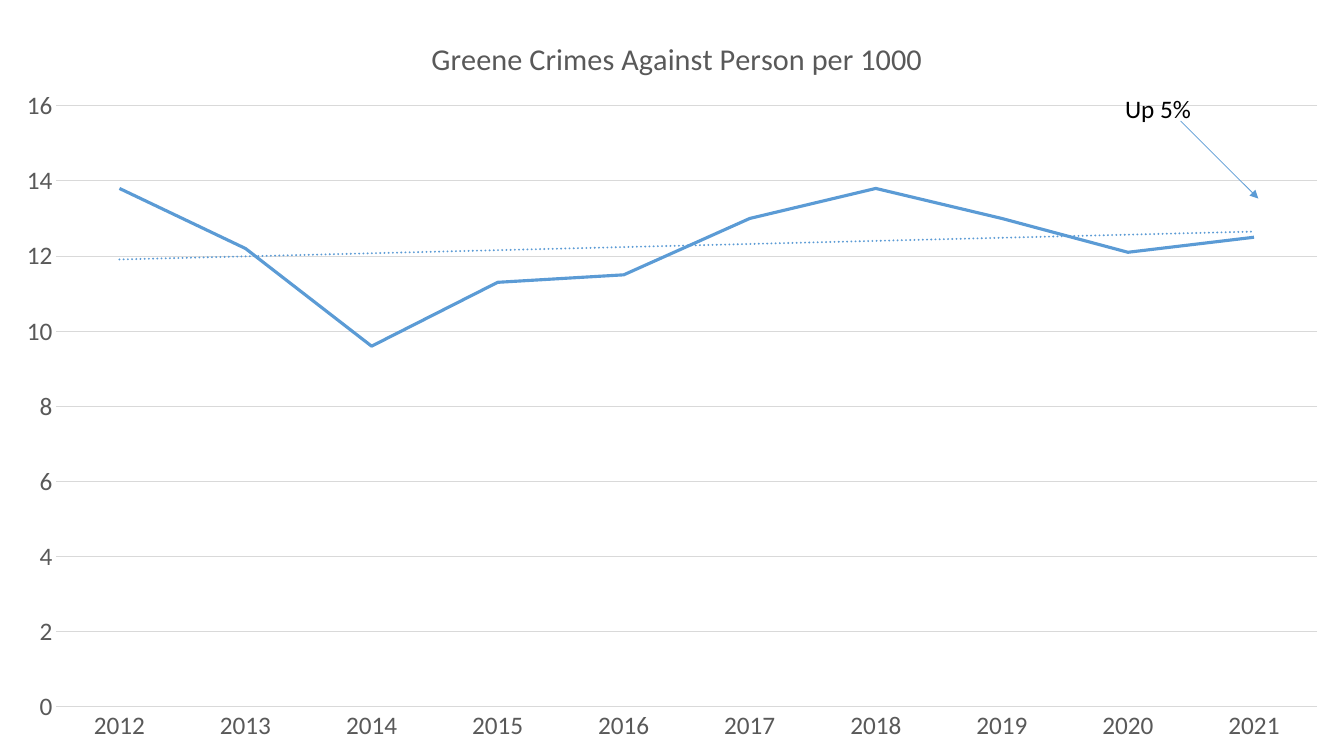
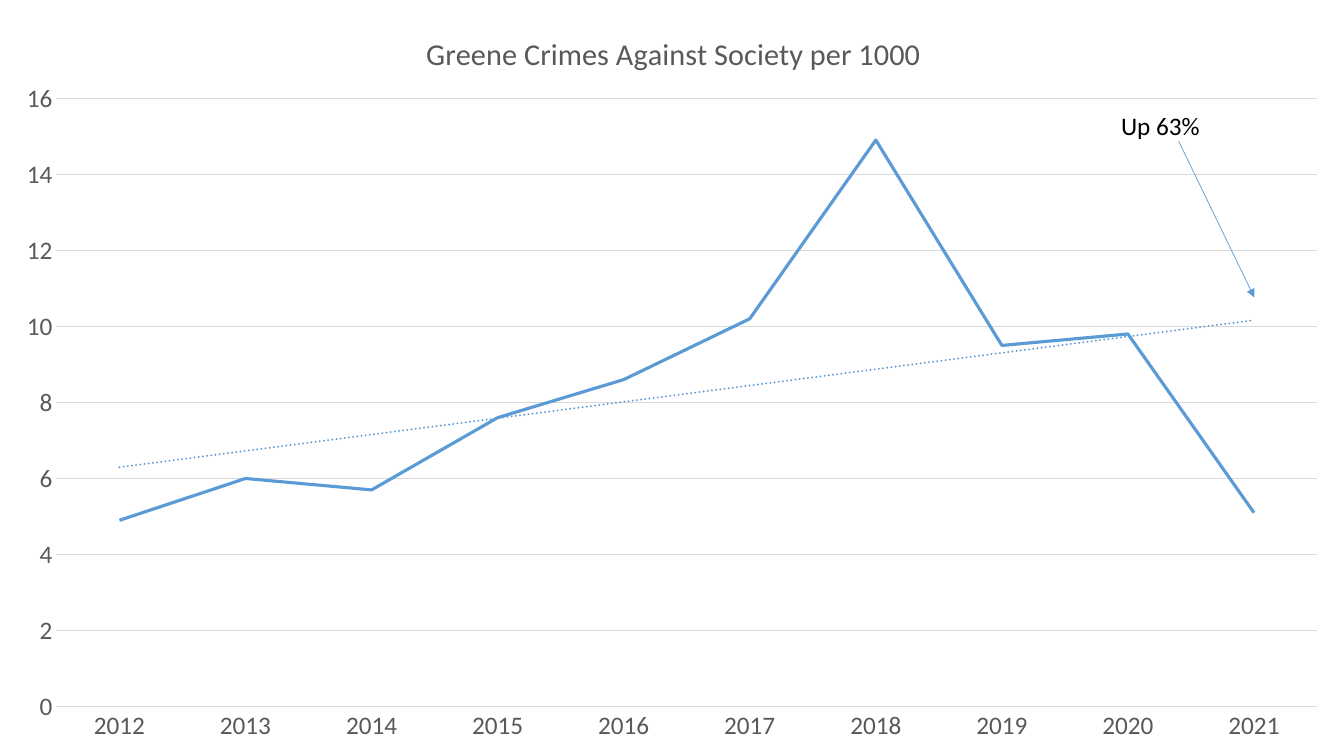
import pptx
import pptx.chart.data
import pptx.dml.color
import pptx.enum.chart
import pptx.enum.dml
import pptx.enum.shapes
import pptx.enum.text
import pptx.oxml
import pptx.oxml.ns
import pptx.util

Inches, Pt = pptx.util.Inches, pptx.util.Pt
FONT = "Calibri"
BLUE, GREY, RULE, BLACK = "5B9BD5", "595959", "D9D9D9", "000000"
WIDE, HIGH = Inches(13.33), Inches(7.5)
YEARS = [str(year) for year in range(2012, 2022)]
NS = pptx.oxml.ns.nsdecls("c", "a")

PAGES = [
    {
        "title": "Greene Crimes Against Person per 1000",
        "rates": [13.8, 12.2, 9.6, 11.3, 11.5, 13, 13.8, 13, 12.1, 12.5],
        "head": (0.317, 0.042),
        "top": 0.14,
        "note": ("Up 5%", 11.06, 0.88, 0.86),
        "arrow": (11.71, 1.2, 12.48, 1.97),
    },
    {
        "title": "Greene Crimes Against Society per 1000",
        "rates": [4.9, 6, 5.7, 7.6, 8.6, 10.2, 14.9, 9.5, 9.8, 5.1],
        "head": (0.313, 0.035),
        "top": 0.13,
        "note": ("Up 63%", 11.02, 1.05, 0.99),
        "arrow": (11.69, 1.4, 12.44, 2.95),
    },
]


def color(code):
    return pptx.dml.color.RGBColor.from_string(code)


def style(font, size, code):
    font.name, font.size, font.bold = FONT, Pt(size), False
    font.color.rgb = color(code)


def stroke(line, code, width):
    line.color.rgb = color(code)
    line.width = Pt(width)


def place(part, index, inner="", **spot):
    """Fix a chart part at fractions of the chart's width and height."""
    for old in part.findall(pptx.oxml.ns.qn("c:layout")):
        part.remove(old)
    modes = "".join(f'<c:{key}Mode val="edge"/>' for key in "xy")
    sizes = "".join(f'<c:{key} val="{val}"/>' for key, val in spot.items())
    part.insert(index, pptx.oxml.parse_xml(
        f"<c:layout {NS}><c:manualLayout>{inner}{modes}{sizes}"
        "</c:manualLayout></c:layout>"))


def add_trend(series):
    trend = pptx.oxml.parse_xml(
        f'<c:trendline {NS}><c:spPr><a:ln w="{Pt(1.5)}" cap="rnd"><a:solidFill>'
        f'<a:srgbClr val="{BLUE}"/></a:solidFill><a:prstDash val="sysDot"/></a:ln>'
        '</c:spPr><c:trendlineType val="linear"/><c:dispRSqr val="0"/>'
        '<c:dispEq val="0"/></c:trendline>')
    series._element.find(pptx.oxml.ns.qn("c:cat")).addprevious(trend)


def set_axes(chart):
    years, rates = chart.category_axis, chart.value_axis
    for axis in (years, rates):
        axis.major_tick_mark = pptx.enum.chart.XL_TICK_MARK.NONE
        axis.minor_tick_mark = pptx.enum.chart.XL_TICK_MARK.NONE
        style(axis.tick_labels.font, 18, GREY)
    stroke(years.format.line, RULE, 0.75)
    rates.format.line.fill.background()
    rates.minimum_scale, rates.maximum_scale, rates.major_unit = 0, 16, 2
    rates.tick_labels.number_format = "#,##0"
    rates.tick_labels.number_format_is_linked = False
    stroke(rates.major_gridlines.format.line, RULE, 0.75)


def add_chart(slide, title, rates, head, top):
    data = pptx.chart.data.CategoryChartData()
    data.categories = YEARS
    data.add_series(title, rates)
    chart = slide.shapes.add_chart(
        pptx.enum.chart.XL_CHART_TYPE.LINE, 0, 0, WIDE, HIGH, data).chart
    style(chart.font, 18, BLACK)
    chart.has_legend = False
    chart.has_title = True
    text = chart.chart_title.text_frame.paragraphs[0]
    text.text = title
    style(text.font, 21.6, GREY)
    place(chart.chart_title._element, 1, x=head[0], y=head[1])
    set_axes(chart)
    plot = chart.plots[0]
    plot.vary_by_categories = False
    series = plot.series[0]
    series.smooth = False
    series.marker.style = pptx.enum.chart.XL_MARKER_STYLE.NONE
    stroke(series.format.line, BLUE, 2.25)
    add_trend(series)
    place(plot._element.getparent(), 0, '<c:layoutTarget val="inner"/>',
          x=0.042, y=top, w=0.938, h=round(0.935 - top, 3))


def add_note(slide, text, left, top, width):
    box = slide.shapes.add_textbox(
        Inches(left), Inches(top), Inches(width), Inches(0.4))
    frame = box.text_frame
    frame.word_wrap = False
    frame.auto_size = pptx.enum.text.MSO_AUTO_SIZE.SHAPE_TO_FIT_TEXT
    line = frame.paragraphs[0]
    line.text = text
    style(line.font, 18, BLACK)


def add_arrow(slide, *ends):
    arrow = slide.shapes.add_connector(
        pptx.enum.shapes.MSO_CONNECTOR.STRAIGHT, *map(Inches, ends))
    stroke(arrow.line, BLUE, 0.5)
    arrow.line._get_or_add_ln().append(
        pptx.oxml.parse_xml(f'<a:tailEnd {NS} type="triangle"/>'))
    arrow._element.spPr.append(pptx.oxml.parse_xml(f"<a:effectLst {NS}/>"))


def main():
    deck = pptx.Presentation()
    deck.slide_width, deck.slide_height = WIDE, HIGH
    blank = deck.slide_layouts[6]
    for page in PAGES:
        slide = deck.slides.add_slide(blank)
        add_chart(slide, page["title"], page["rates"], page["head"], page["top"])
        add_note(slide, *page["note"])
        add_arrow(slide, *page["arrow"])
    deck.save("out.pptx")


if __name__ == "__main__":
    main()
